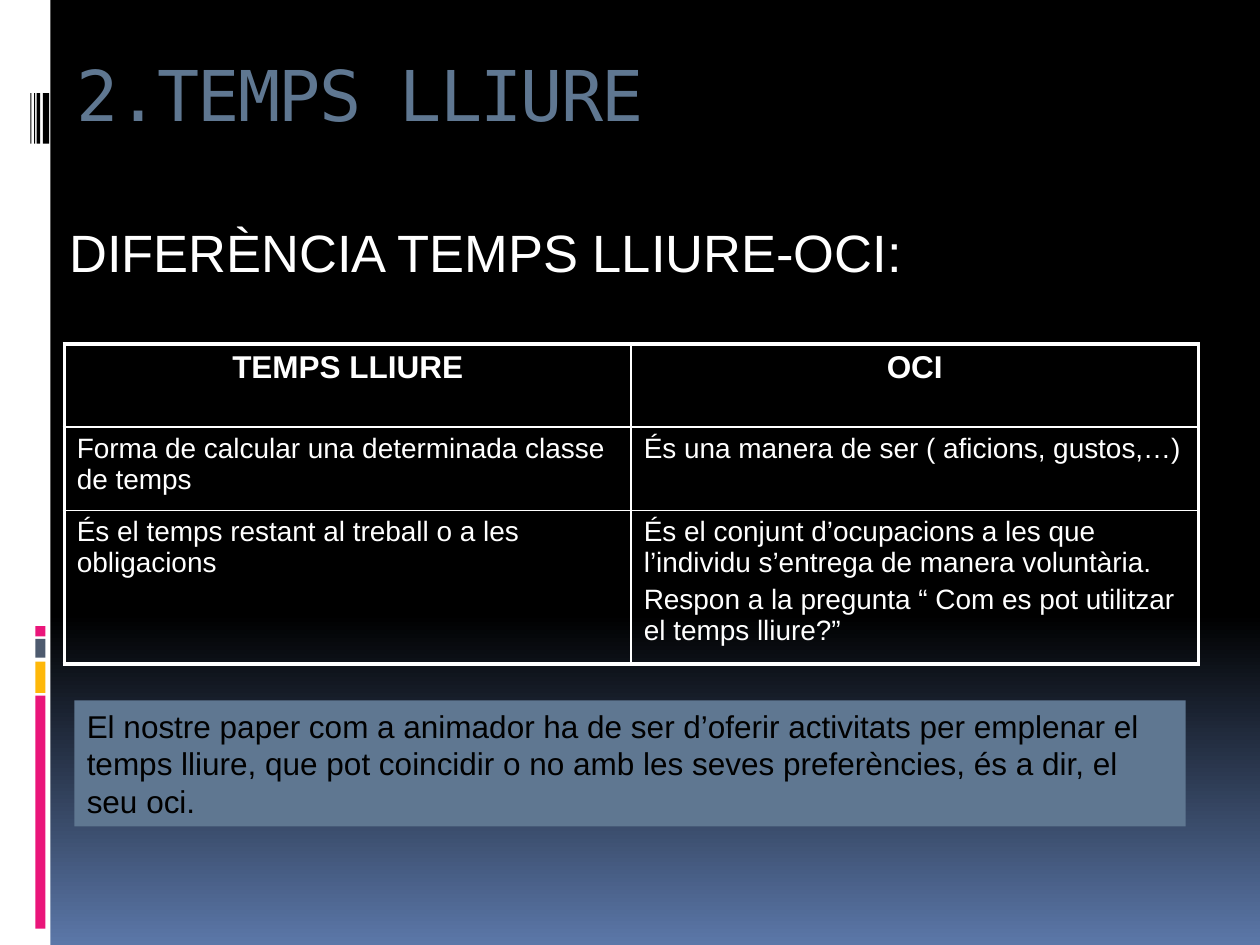
from copy import deepcopy

from lxml import etree
from pptx import Presentation
from pptx.dml.color import RGBColor
from pptx.enum.shapes import MSO_SHAPE
from pptx.enum.text import MSO_ANCHOR, MSO_AUTO_SIZE, PP_ALIGN
from pptx.oxml.ns import qn
from pptx.util import Inches, Pt

RECTANGLE = MSO_SHAPE.RECTANGLE
TOP, NO_FIT = MSO_ANCHOR.TOP, MSO_AUTO_SIZE.NONE
LEFT, CENTER = PP_ALIGN.LEFT, PP_ALIGN.CENTER
WHITE, BLACK, SLATE, PINK = "FFFFFF", "000000", "5F7791", "EA157A"

# Content
TITLE = "2.TEMPS LLIURE"
HEADING = "DIFERÈNCIA TEMPS LLIURE-OCI:"
TABLE_ROWS = [
    (["TEMPS LLIURE"], ["OCI"]),
    (["Forma de calcular una determinada classe de temps"],
     ["És una manera de ser ( aficions, gustos,…)"]),
    (["És el temps restant al treball o a les obligacions"],
     ["És el conjunt d’ocupacions a les que l’individu s’entrega de manera voluntària.",
      "Respon a la pregunta “ Com es pot utilitzar el temps lliure?”"]),
]
ROW_HEIGHTS = [0.66, 0.66, 1.22]
CONCLUSION = ("El nostre paper com a animador ha de ser d’oferir activitats per emplenar el "
              "temps lliure, que pot coincidir o no amb les seves preferències, és a dir, el seu oci.")

# Decoration: (top, height, colour) and (left, width)
COLOUR_BARS = [(5.52, 1.85, PINK), (5.25, 0.25, "FEB80A"),
               (5.07, 0.15, "4E5B6F"), (4.97, 0.08, PINK)]
BLACK_STRIPES = [(0.34, 0.05), (0.29, 0.03), (0.27, 0.01), (0.24, 0.01)]
BACKGROUND_STOPS = [(0, BLACK), (0.65, BLACK), (1, "5B77A8")]


def rgb(value):
    return RGBColor.from_string(value)


def style(paragraph, size, colour, font="Arial", bold=False, align=LEFT, before=0):
    paragraph.font.name = font
    paragraph.font.size = Pt(size)
    paragraph.font.bold = bold
    paragraph.font.color.rgb = rgb(colour)
    paragraph.alignment = align
    paragraph.space_before = Pt(before)


def add_rectangle(left, top, width, height, colour):
    shape = slide.shapes.add_shape(RECTANGLE, Inches(left), Inches(top),
                                   Inches(width), Inches(height))
    shape.shadow.inherit = False
    shape.fill.solid()
    shape.fill.fore_color.rgb = rgb(colour)
    shape.line.fill.background()
    return shape


def place(placeholder, left, top, width, height, text):
    placeholder.left, placeholder.top = Inches(left), Inches(top)
    placeholder.width, placeholder.height = Inches(width), Inches(height)
    frame = placeholder.text_frame
    frame.text = text
    frame.word_wrap = True
    frame.auto_size = NO_FIT
    frame.vertical_anchor = TOP
    return frame.paragraphs[0]


def add_borders(cell, widths):
    properties = cell._tc.get_or_add_tcPr()
    for position, (side, width) in enumerate(widths.items()):
        line = etree.Element(qn(f"a:{side}"), w=str(Pt(width)))
        fill = etree.SubElement(line, qn("a:solidFill"))
        etree.SubElement(fill, qn("a:srgbClr"), val=WHITE)
        properties.insert(position, line)


presentation = Presentation()
presentation.slide_width, presentation.slide_height = Inches(10), Inches(7.5)
slide = presentation.slides.add_slide(presentation.slide_layouts[1])

# Background gradient, running downwards
background = slide.background.fill
background.gradient()
background.gradient_angle = 270
last_stop = background._fill._gradFill.gsLst[-1]
last_stop.addprevious(deepcopy(last_stop))
for stop, (position, colour) in zip(background.gradient_stops, BACKGROUND_STOPS):
    stop.position = position
    stop.color.rgb = rgb(colour)

# Side strip
add_rectangle(0, 0, 0.4, 7.5, WHITE)
for top, height, colour in COLOUR_BARS:
    add_rectangle(0.28, top, 0.08, height, colour)
for left, width in BLACK_STRIPES:
    add_rectangle(left, 0.74, width, 0.4, BLACK)

# Title
title = place(slide.shapes.title, 0.51, 0.36, 9, 1.5, TITLE)
style(title, 40, SLATE, font="DejaVu Sans Mono")
title.runs[0].font._element.set("spc", "-100")

# Bulleted heading
heading = place(slide.placeholders[1], 0, 1.7, 9, 4.96, HEADING)
style(heading, 30, WHITE, before=7)
properties = heading._p.get_or_add_pPr()
properties.set("marL", str(Inches(0.45)))
properties.set("indent", str(Inches(-0.38)))
bullet_colour = etree.SubElement(properties, qn("a:buClr"))
etree.SubElement(bullet_colour, qn("a:srgbClr"), val="D6ECFF")
etree.SubElement(properties, qn("a:buSzPct"), val="95000")
etree.SubElement(properties, qn("a:buFont"), typeface="Arial")
etree.SubElement(properties, qn("a:buChar"), char="▪")
properties.append(properties.find(qn("a:defRPr")))  # must follow the bullet

# Comparison table: thick outer frame, thin inner lines
table = slide.shapes.add_table(len(TABLE_ROWS), 2, Inches(0.51), Inches(2.73),
                               Inches(9), Inches(sum(ROW_HEIGHTS))).table
last_row = len(TABLE_ROWS) - 1
for row, texts in enumerate(TABLE_ROWS):
    table.rows[row].height = Inches(ROW_HEIGHTS[row])
    header = row == 0
    size = 18 if header else 16
    for column, lines in enumerate(texts):
        cell = table.cell(row, column)
        cell.fill.background()
        cell.text = "\n".join(lines)
        for paragraph in cell.text_frame.paragraphs:
            style(paragraph, size, WHITE, bold=header,
                  align=CENTER if header else LEFT, before=0.2 * size)
        outer = {"lnL": column == 0, "lnR": column == 1,
                 "lnT": header, "lnB": row == last_row}
        add_borders(cell, {side: 2.25 if edge else 1 for side, edge in outer.items()})

# Conclusion box
conclusion = add_rectangle(0.59, 5.56, 8.82, 1, SLATE)
conclusion.text_frame.text = CONCLUSION
conclusion.text_frame.word_wrap = True
conclusion.text_frame.vertical_anchor = TOP
style(conclusion.text_frame.paragraphs[0], 18, BLACK, before=9)

presentation.save("out.pptx")
